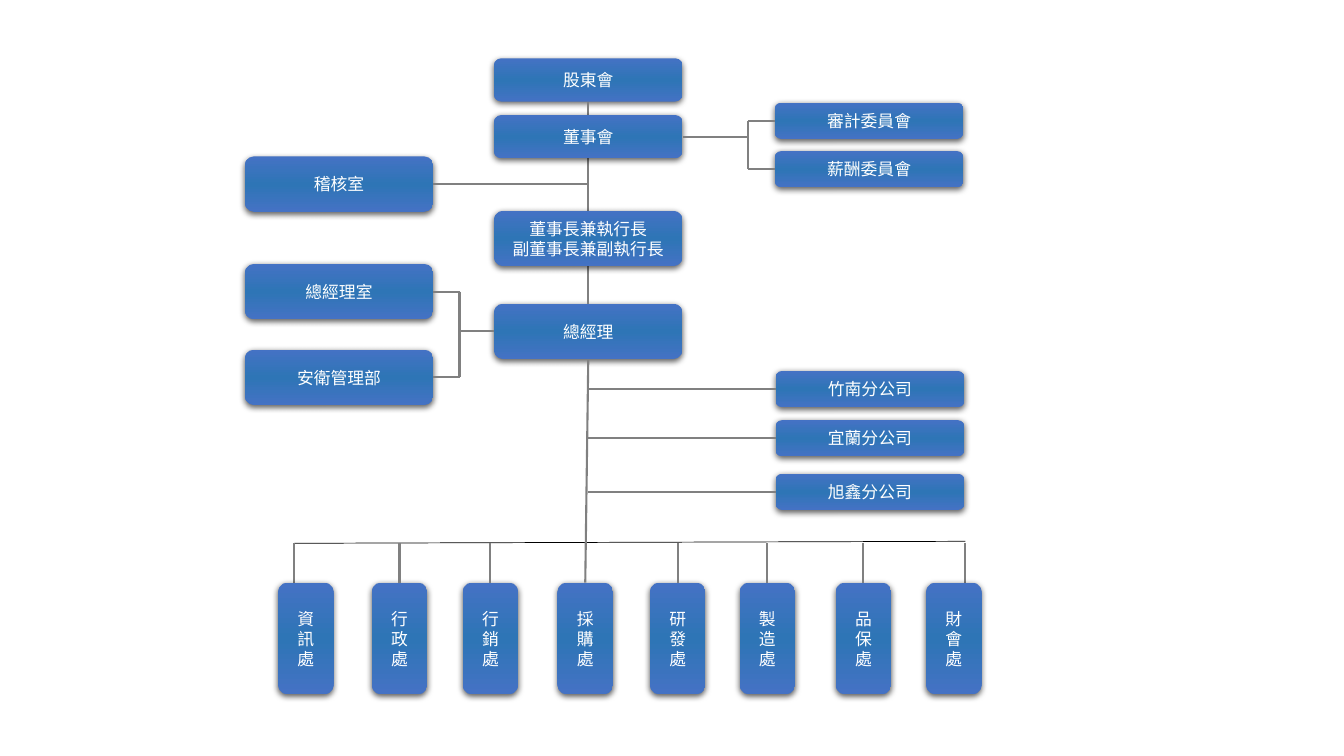
"""Build a one-page company organisation chart."""
import dataclasses

import lxml.etree
import pptx
import pptx.dml.color
import pptx.enum.shapes
import pptx.enum.text
import pptx.oxml
import pptx.oxml.ns
import pptx.util
from pptx.util import Cm

BLUE = pptx.dml.color.RGBColor(0x44, 0x72, 0xC4)
DEEP_BLUE = pptx.dml.color.RGBColor(0x2E, 0x75, 0xB6)
GREY = pptx.dml.color.RGBColor(0x80, 0x80, 0x80)
BLACK = pptx.dml.color.RGBColor(0x00, 0x00, 0x00)
WHITE = pptx.dml.color.RGBColor(0xFF, 0xFF, 0xFF)
FONT = "Noto Sans CJK TC"
TOP, LEFT, BOTTOM, RIGHT = range(4)
SHADOW = (
    '<a:effectLst xmlns:a="http://schemas.openxmlformats.org/drawingml/2006/main">'
    '<a:outerShdw blurRad="57150" dist="19050" dir="5400000" algn="ctr" rotWithShape="0">'
    '<a:srgbClr val="000000"><a:alpha val="63000"/></a:srgbClr>'
    '</a:outerShdw></a:effectLst>'
)


@dataclasses.dataclass
class Box:
    """Area of the page, in centimetres."""
    left: float
    top: float
    width: float
    height: float


def paint_gradient(shape):
    """Fill a shape with a vertical gradient that is deeper in the middle."""
    shape.fill.gradient()
    shape.fill.gradient_angle = 90
    for stop in shape.fill.gradient_stops:
        stop.color.rgb = BLUE
    stops = shape._element.spPr.find(".//" + pptx.oxml.ns.qn("a:gsLst"))
    middle = pptx.oxml.parse_xml(lxml.etree.tostring(stops[0]))
    stops.insert(1, middle)
    middle.set("pos", "50000")
    shape.fill.gradient_stops[1].color.rgb = DEEP_BLUE


def add_unit(slide, name, box, side_inset=0.25):
    """Add the rounded box of one organisational unit."""
    shape = slide.shapes.add_shape(
        pptx.enum.shapes.MSO_SHAPE.ROUNDED_RECTANGLE,
        Cm(box.left), Cm(box.top), Cm(box.width), Cm(box.height))
    paint_gradient(shape)
    shape.line.fill.background()
    shape._element.spPr.append(pptx.oxml.parse_xml(SHADOW))
    frame = shape.text_frame
    frame.word_wrap = True
    frame.vertical_anchor = pptx.enum.text.MSO_ANCHOR.MIDDLE
    frame.margin_left = frame.margin_right = Cm(side_inset)
    frame.text = name
    para = frame.paragraphs[0]
    para.alignment = pptx.enum.text.PP_ALIGN.CENTER
    for span in para.runs:
        span.font.name = FONT
        span.font.size = pptx.util.Pt(12)
        span.font.color.rgb = WHITE
        fonts = span.font._element
        lxml.etree.SubElement(fonts, pptx.oxml.ns.qn("a:ea")).set("typeface", FONT)
    return shape


def side_point(shape, side):
    """Return the middle of one side of a shape."""
    center_x = shape.left + shape.width // 2
    center_y = shape.top + shape.height // 2
    return {TOP: (center_x, shape.top), LEFT: (shape.left, center_y),
            BOTTOM: (center_x, shape.top + shape.height),
            RIGHT: (shape.left + shape.width, center_y)}[side]


def add_link(slide, start, end, color=GREY, weight=1.5):
    """Draw a line between two ends, each a point or a (shape, side) pair."""
    joined = [hasattr(place[0], "shape_id") for place in (start, end)]
    points = [side_point(*place) if is_shape else place
              for place, is_shape in zip((start, end), joined)]
    link = slide.shapes.add_connector(
        pptx.enum.shapes.MSO_CONNECTOR.STRAIGHT, *points[0], *points[1])
    if joined[0]:
        link.begin_connect(*start)
    if joined[1]:
        link.end_connect(*end)
    link.line.color.rgb = color
    link.line.width = pptx.util.Pt(weight)
    lxml.etree.SubElement(link._element.spPr, pptx.oxml.ns.qn("a:effectLst"))
    return link


def add_bracket(slide, hub, hub_side, units, unit_side, rail):
    """Tie a hub to a pair of units through an upright rail."""
    rail_ends = []
    for unit in units:
        rail_end = (rail, side_point(unit, unit_side)[1])
        add_link(slide, (unit, unit_side), rail_end)
        rail_ends.append(rail_end)
    add_link(slide, *rail_ends)
    add_link(slide, (hub, hub_side), (rail, side_point(hub, hub_side)[1]))


def add_leadership(slide, box):
    """Stack the governing bodies and return the board and general manager."""
    def add_level(name, offset, height):
        return add_unit(slide, name, Box(box.left, box.top + offset, box.width, height))

    shareholders = add_level("股東會", 0, 1.09)
    manager = add_level("總經理", box.height - 1.4, 1.4)
    add_link(slide, (shareholders, BOTTOM), (manager, TOP))
    board = add_level("董事會", 1.43, 1.09)
    add_level("董事長兼執行長\v副董事長兼副執行長", 3.84, 1.4)
    return board, manager


def add_staff_offices(slide, box, manager):
    """Place the audit office and the manager's two offices."""
    audit, office, safety = [
        add_unit(slide, name, Box(box.left, box.top + offset, box.width, 1.4))
        for name, offset in (("稽核室", 0), ("總經理室", 2.71), ("安衛管理部", 4.87))]
    trunk = side_point(manager, TOP)[0]
    add_link(slide, (audit, RIGHT), (trunk, side_point(audit, RIGHT)[1]))
    add_bracket(slide, manager, LEFT, (office, safety), RIGHT,
                Cm(box.left + box.width + 0.66))


def add_committees(slide, box, board):
    """Place the two board committees."""
    height = 0.91
    committees = [
        add_unit(slide, name, Box(box.left, top, box.width, height))
        for name, top in (("審計委員會", box.top),
                          ("薪酬委員會", box.top + box.height - height))]
    add_bracket(slide, board, RIGHT, committees, LEFT, Cm(box.left - 0.69))


def add_branches(slide, box, manager):
    """Place the branch companies beside the trunk."""
    trunk = side_point(manager, BOTTOM)[0]
    for name, offset in (("竹南分公司", 0), ("宜蘭分公司", 1.24), ("旭鑫分公司", 2.59)):
        branch = add_unit(slide, name, Box(box.left, box.top + offset, box.width, 0.91))
        add_link(slide, (trunk, side_point(branch, LEFT)[1]), (branch, LEFT))


def add_departments(slide, box, manager):
    """Hang the row of departments from a common rail."""
    width, height = 1.4, 2.82
    names = ("資訊處", "行政處", "行銷處", "採購處", "研發處", "製造處", "品保處", "財會處")
    offsets = (0, 2.36, 4.65, 7.04, 9.37, 11.63, 14.05, 16.33)
    top = box.top + box.height - height
    rail_left, rail_right = box.left + 0.41, box.left + box.width - 0.41
    rail_y = Cm(box.top)
    add_link(slide, (Cm(rail_left), rail_y), (Cm(rail_right), Cm(box.top - 0.05)),
             BLACK, 0.5)
    for rail_end in (rail_left, rail_right):
        add_link(slide, (Cm(rail_end), rail_y), (Cm(rail_end), Cm(top)))
    for name, offset in zip(names, offsets):
        unit = add_unit(slide, name, Box(box.left + offset, top, width, height), 0.38)
        if name == "採購處":
            add_link(slide, (manager, BOTTOM), (unit, TOP))
        elif name not in (names[0], names[-1]):
            add_link(slide, (side_point(unit, TOP)[0], rail_y), (unit, TOP))


def main():
    """Lay out the chart and save the deck."""
    deck = pptx.Presentation()
    deck.slide_width, deck.slide_height = Cm(33.87), Cm(19.05)
    page = deck.slides.add_slide(deck.slide_layouts[6])
    board, manager = add_leadership(page, Box(12.45, 1.47, 4.75, 7.58))
    add_staff_offices(page, Box(6.17, 3.94, 4.75, 6.27), manager)
    add_committees(page, Box(19.53, 2.59, 4.75, 2.13), board)
    add_branches(page, Box(19.55, 9.35, 4.75, 3.5), manager)
    add_departments(page, Box(7.01, 13.69, 17.73, 3.81), manager)
    deck.save("out.pptx")


if __name__ == "__main__":
    main()
